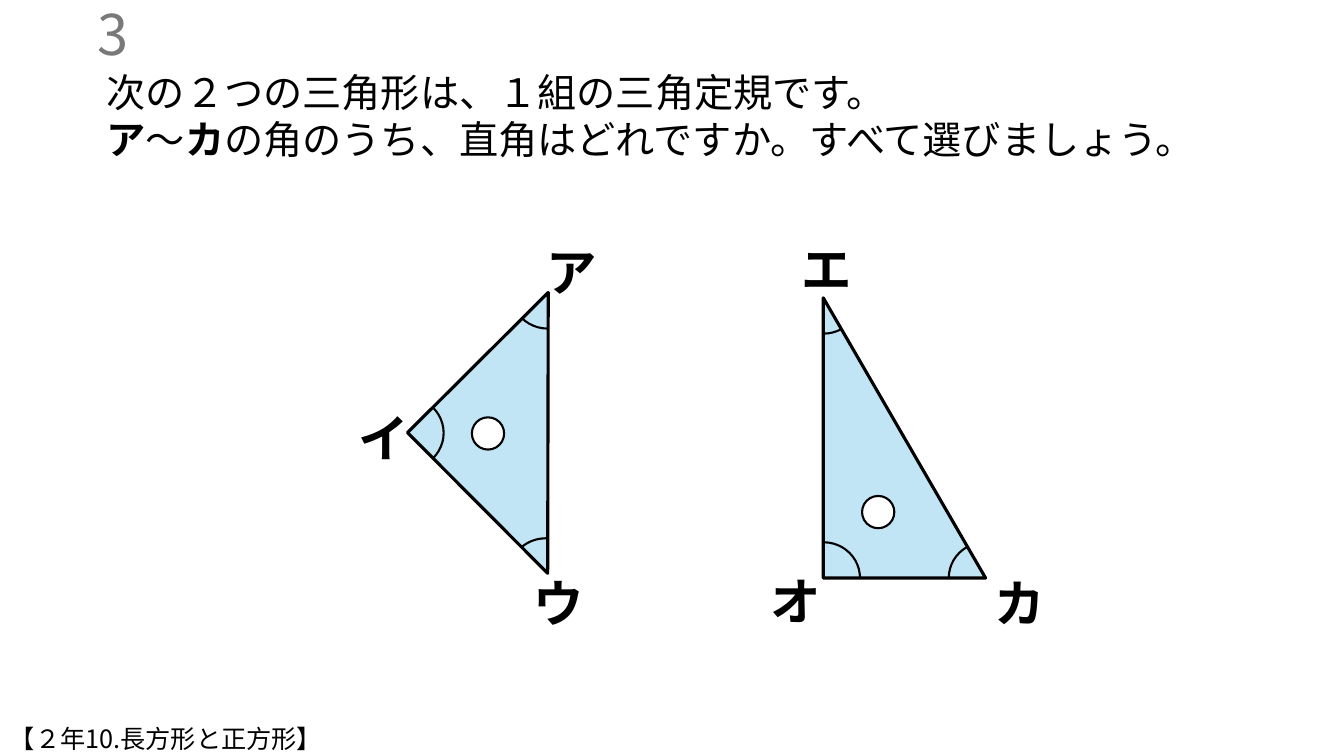
from pptx import Presentation, util as u
from pptx.dml.color import RGBColor
from pptx.enum import shapes, text
from pptx.oxml.ns import qn

COLORS = {"ink": "000000", "number": "797979", "ruler": "C1E5F5", "hole": "FFFFFF"}
FONT = "Noto Sans CJK JP"
MARK_W, MARK_H = 0.72, 0.71
LABEL_W, LABEL_H = 0.64, 0.71
HOLE = 0.32


def rgb(name):
    return RGBColor.from_string(COLORS[name])


def place(sp, left, top, width, height):
    sp.left, sp.top = u.Inches(left), u.Inches(top)
    sp.width, sp.height = u.Inches(width), u.Inches(height)


def write(sp, lines, size, color="ink", bold=False, align=text.PP_ALIGN.LEFT,
          anchor=text.MSO_ANCHOR.TOP):
    """Each line is a string or a list of (string, bold) runs."""
    tf = sp.text_frame
    tf.word_wrap = True
    tf.auto_size = text.MSO_AUTO_SIZE.NONE
    tf.vertical_anchor = anchor
    tf.margin_top = u.Inches(0.05) + u.Pt(size * 0.1)
    for i, line in enumerate(lines):
        p = tf.paragraphs[0] if i == 0 else tf.add_paragraph()
        p.alignment = align
        p.line_spacing = u.Pt(size * 1.2)
        runs = [(line, bold)] if isinstance(line, str) else line
        for words, is_bold in runs:
            r = p.add_run()
            r.text = words
            r.font.size, r.font.bold, r.font.name = u.Pt(size), is_bold, FONT
            r.font.color.rgb = rgb(color)
            ea = r._r.get_or_add_rPr().makeelement(qn("a:ea"), {"typeface": FONT})
            r.font._element.find(qn("a:latin")).addnext(ea)


def add_text(s, box, lines, size, **fmt):
    sp = s.shapes.add_textbox(*[u.Inches(v) for v in box])
    write(sp, lines, size, **fmt)


def add_outline(s, kind, box, fill=None, weight=1.5):
    sp = s.shapes.add_shape(kind, *[u.Inches(v) for v in box])
    sp.shadow.inherit = False
    if fill:
        sp.fill.solid()
        sp.fill.fore_color.rgb = rgb(fill)
    else:
        sp.fill.background()
    sp.line.color.rgb = rgb("ink")
    sp.line.width = u.Pt(weight)
    return sp


def add_question(s, box):
    title = s.shapes.title
    place(title, *box)
    write(title, [
        "次の２つの三角形は、１組の三角定規です。",
        [("ア", True), ("～", False), ("カ", True),
         ("の角のうち、直角はどれですか。すべて選びましょう。", False)],
    ], 28)


def add_set_square(s, left, top, triangle, rotation, flip, hole, corners):
    """Corners: label, label offset, angle mark offset, start and end in degrees."""
    def at(offset, width, height):
        return left + offset[0], top + offset[1], width, height

    # Ruler body and its hole
    body = add_outline(s, shapes.MSO_SHAPE.RIGHT_TRIANGLE,
                       at(triangle[:2], *triangle[2:]), "ruler", 2.25)
    body.rotation = rotation
    if flip:
        body._element.spPr.find(qn("a:xfrm")).set("flipV", "1")
    add_outline(s, shapes.MSO_SHAPE.OVAL, at(hole, HOLE, HOLE), "hole")

    # Angle marks and corner labels
    for label, label_at, mark_at, start, end in corners:
        mark = add_outline(s, shapes.MSO_SHAPE.ARC, at(mark_at, MARK_W, MARK_H))
        for i, degrees in enumerate((start, end)):
            mark.adjustments[i] = degrees * 0.6
        add_text(s, at(label_at, LABEL_W, LABEL_H), [label], 36, bold=True)


def main():
    prs = Presentation()
    prs.slide_width, prs.slide_height = u.Inches(13.33), u.Inches(7.5)
    s = prs.slides.add_slide(prs.slide_layouts[5])

    # Question and its number
    add_question(s, (0.96, 0.59, 11.53, 1.04))
    add_text(s, (-1.63, 0.1, 3, 0.4), ["3"], 40, color="number",
             align=text.PP_ALIGN.RIGHT, anchor=text.MSO_ANCHOR.MIDDLE)

    # Isosceles set square
    add_set_square(s, 3.46, 2.29, (0.99, 1.02, 1.97, 1.97), 45.1, False, (1.22, 1.85), [
        ("ア", (1.86, 0), (1.61, 0.26), 89.2, 134.5),
        ("イ", (0, 1.65), (0.22, 1.65), 317.2, 42.9),
        ("ウ", (1.73, 3.29), (1.59, 3.05), 228.4, 271.8),
    ])

    # Long set square
    add_set_square(s, 7.54, 2.26, (0.04, 1.28, 2.78, 1.61), 270, True, (1.01, 2.66), [
        ("エ", (0.31, 0), (0.27, 0.34), 61.7, 88.9),
        ("オ", (0, 3.3), (0.27, 3.12), 271.6, 0.3),
        ("カ", (2.23, 3.32), (1.87, 3.12), 181, 241.7),
    ])

    # Unit name
    add_text(s, (0, 7.1, 7.49, 0.4), ["【２年10.長方形と正方形】"], 18)
    prs.save("out.pptx")


if __name__ == "__main__":
    main()
